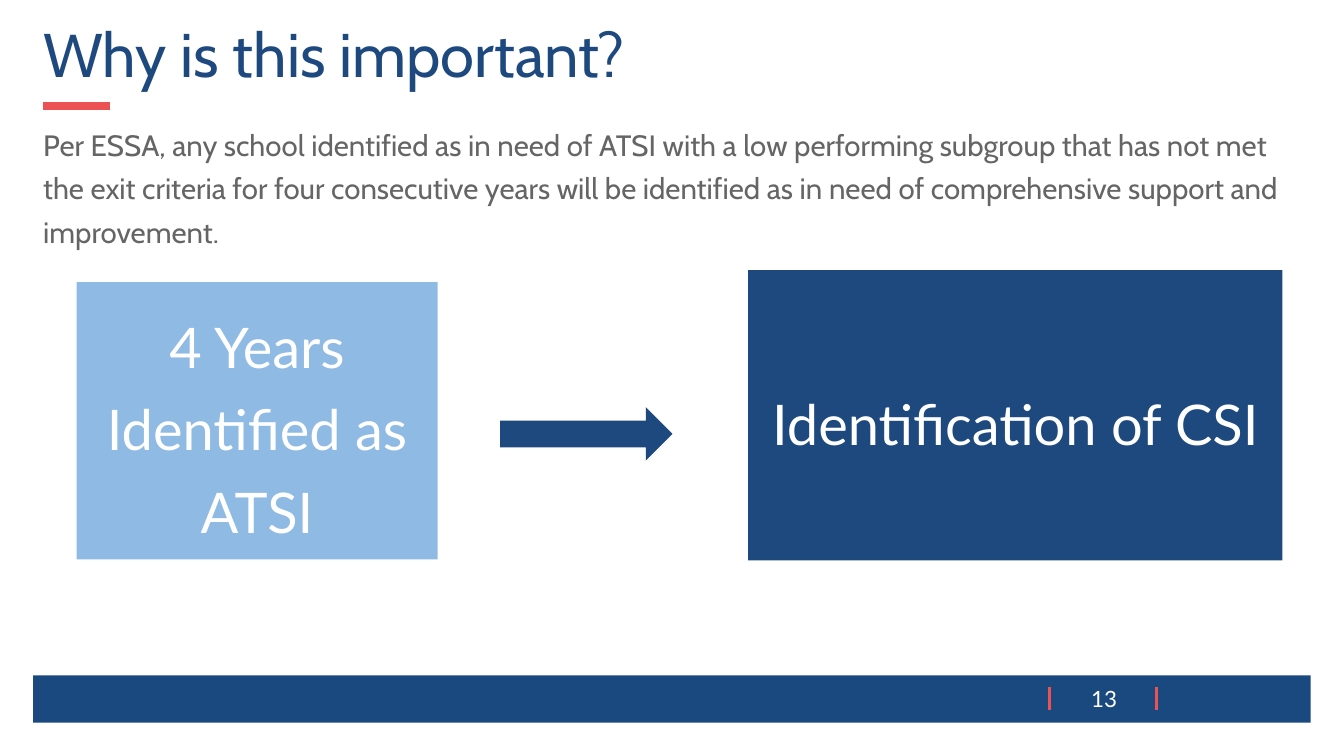
from pptx import Presentation
from pptx.dml.color import RGBColor
from pptx.enum import shapes, text
from pptx.oxml.ns import qn
from pptx.util import Inches, Pt
from lxml import etree

COLORS = {
    "navy": "1E497F",
    "footer": "1A497F",
    "sky": "8FBAE4",
    "red": "EC5153",
    "gray": "656565",
    "white": "FFFFFF",
}
LEFT, CENTER = text.PP_ALIGN.LEFT, text.PP_ALIGN.CENTER
TOP, MIDDLE = text.MSO_ANCHOR.TOP, text.MSO_ANCHOR.MIDDLE
RECTANGLE = shapes.MSO_SHAPE.RECTANGLE

presentation = Presentation()
presentation.slide_width = Inches(13.33)
presentation.slide_height = Inches(7.5)
slide = presentation.slides.add_slide(presentation.slide_layouts[6])


def add_filled(kind, box, color):
    shape = slide.shapes.add_shape(kind, *map(Inches, box))
    shape.shadow.inherit = False
    shape.fill.solid()
    shape.fill.fore_color.rgb = RGBColor.from_string(COLORS[color])
    shape.line.fill.background()
    return shape


def write(shape, wording, font, size, color, align, anchor, spacing):
    frame = shape.text_frame
    frame.word_wrap = True
    frame.vertical_anchor = anchor
    paragraph = frame.paragraphs[0]
    paragraph.text = wording
    for name, value in {"alignment": align, "line_spacing": spacing}.items():
        setattr(paragraph, name, value)
    for name, value in {"name": font, "size": Pt(size)}.items():
        setattr(paragraph.font, name, value)
    paragraph.font.color.rgb = RGBColor.from_string(COLORS[color])


# Footer bar, title underline and page number dividers
add_filled(RECTANGLE, (0.33, 6.7, 12.67, 0.47), "footer")
accent_lines = [
    ((0.43, 1.05, 1.09, 1.05), 6),
    ((10.41, 6.82, 10.41, 7.04), 2.25),
    ((11.47, 6.82, 11.47, 7.04), 2.25),
]
for ends, width in accent_lines:
    line = slide.shapes.add_connector(
        shapes.MSO_CONNECTOR.STRAIGHT, *map(Inches, ends))
    line.line.color.rgb = RGBColor.from_string(COLORS["red"])
    line.line.width = Pt(width)
    etree.SubElement(line._element.spPr, qn("a:effectLst"))

# Title, page number and body text
text_boxes = [
    ((0.33, 0.19, 12.67, 0.77), "Why is this important?",
     "Cabin", 44, "navy", LEFT, MIDDLE, 0.9),
    ((10.63, 6.75, 0.64, 0.37), "13",
     "Lato", 16, "white", CENTER, MIDDLE, 1.0),
    ((0.33, 1.13, 12.67, 0.93),
     "Per ESSA, any school identified as in need of ATSI with a low performing "
     "subgroup that has not met the exit criteria for four consecutive years "
     "will be identified as in need of comprehensive support and improvement.",
     "Cabin", 21, "gray", LEFT, TOP, 1.23),
]
for box, *content in text_boxes:
    write(slide.shapes.add_textbox(*map(Inches, box)), *content)

# From ATSI to CSI
stages = [
    ((0.76, 2.8, 3.58, 2.75), "sky", "4 Years Identified as ATSI"),
    ((7.42, 2.68, 5.3, 2.88), "navy", "Identification of CSI"),
]
for box, color, wording in stages:
    write(add_filled(RECTANGLE, box, color), wording,
          "Lato", 40, "white", CENTER, MIDDLE, 1.23)
add_filled(shapes.MSO_SHAPE.RIGHT_ARROW, (4.96, 4.04, 1.71, 0.53), "navy")

presentation.save("out.pptx")
